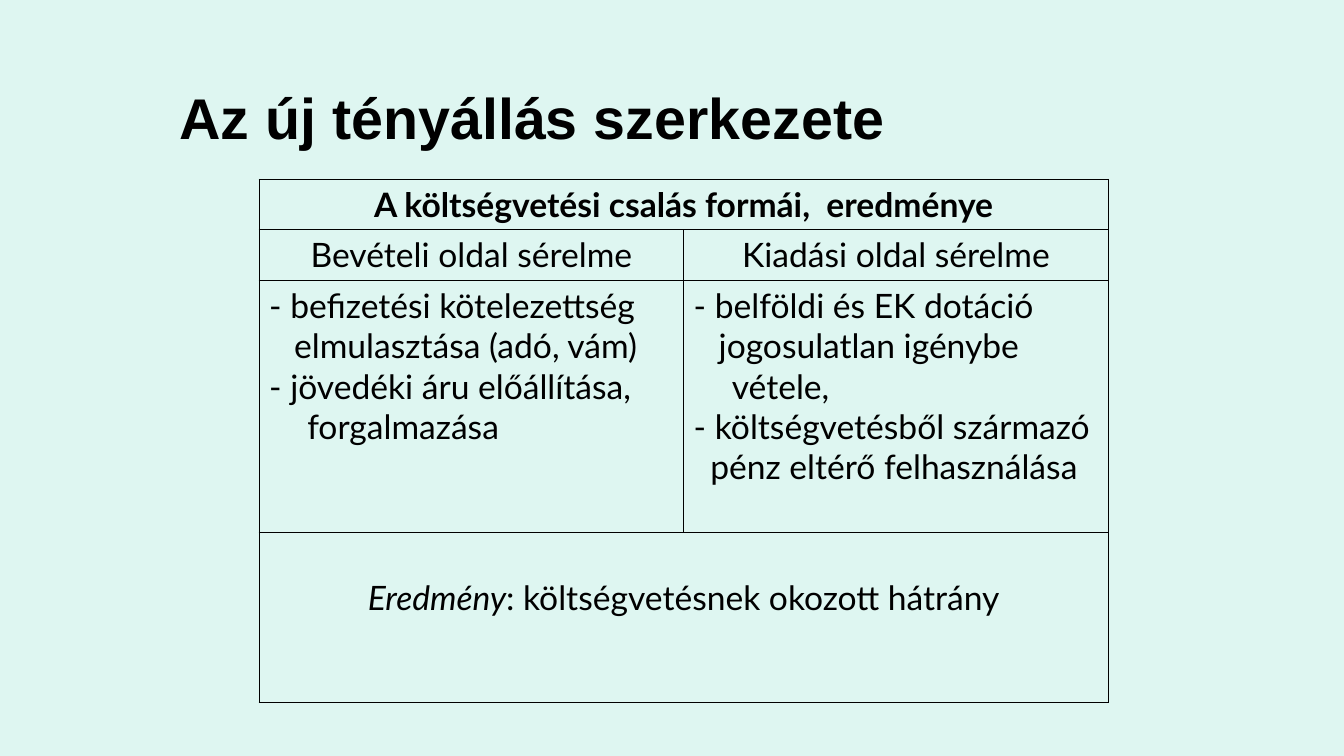
import pptx
import pptx.util
import pptx.dml.color
import pptx.enum.text
import pptx.oxml
import pptx.oxml.ns
from dataclasses import dataclass

Cm, Pt = pptx.util.Cm, pptx.util.Pt
ALIGN = pptx.enum.text.PP_ALIGN


@dataclass(frozen=True)
class Theme:
    background: str = "DEF6F1"
    ink: str = "000000"
    title_font: str = "Arial"
    body_font: str = "Lato"
    title_size: int = 41
    body_size: int = 24
    border: int = 1
    hang: float = 0.96


THEME = Theme()
rgb = pptx.dml.color.RGBColor.from_string

HEADING = "A költségvetési csalás formái,  eredménye"
SIDES = ["Bevételi oldal sérelme", "Kiadási oldal sérelme"]
# Each line of a form: text and where its first line starts, in cm
FORMS = [
    [("- befizetési kötelezettség", 0),
     ("elmulasztása (adó, vám)", 0.63),
     ("- jövedéki áru előállítása, forgalmazása", 0)],
    [("- belföldi és EK dotáció", 0),
     ("jogosulatlan igénybe vétele,", 0.63),
     ("- költségvetésből származó", 0),
     ("pénz eltérő felhasználása", 0.42)],
]
RESULT = ["Eredmény", ": költségvetésnek okozott hátrány"]


def style_run(r, font, size, bold=False):
    r.font.name = font
    r.font.size = Pt(size)
    r.font.bold = bold
    r.font.color.rgb = rgb(THEME.ink)


def add_title(s, text, left, top, width, height):
    sp = s.shapes.title
    sp.left, sp.top, sp.width, sp.height = map(Cm, (left, top, width, height))
    tf = sp.text_frame
    tf.text = text
    tf.auto_size = pptx.enum.text.MSO_AUTO_SIZE.NONE
    tf.vertical_anchor = pptx.enum.text.MSO_ANCHOR.BOTTOM
    p = tf.paragraphs[0]
    p.alignment = ALIGN.LEFT
    style_run(p.runs[0], THEME.title_font, THEME.title_size, bold=True)


def frame_cell(cell):
    """Give a cell thin lines on all sides and no fill."""
    tcPr = cell._tc.get_or_add_tcPr()
    for side in ("lnL", "lnR", "lnT", "lnB"):
        tcPr.append(pptx.oxml.parse_xml(
            f'<a:{side} {pptx.oxml.ns.nsdecls("a")} w="{Pt(THEME.border)}">'
            f'<a:solidFill><a:srgbClr val="{THEME.ink}"/></a:solidFill></a:{side}>'))
    cell.fill.background()


def write_centred(cell, text, bold=False):
    cell.text_frame.text = text
    p = cell.text_frame.paragraphs[0]
    p.alignment = ALIGN.CENTER
    style_run(p.runs[0], THEME.body_font, THEME.body_size, bold)


def write_forms(cell, lines):
    tf = cell.text_frame
    tf.text = "\n".join(text for text, _ in lines)
    for p, (_, start) in zip(tf.paragraphs, lines):
        pPr = p._p.get_or_add_pPr()
        pPr.set("marL", str(Cm(THEME.hang)))
        pPr.set("indent", str(Cm(start - THEME.hang)))
        style_run(p.runs[0], THEME.body_font, THEME.body_size)


def add_forms_table(s, left, top, width, heights):
    tbl = s.shapes.add_table(len(heights), len(SIDES), Cm(left), Cm(top),
                             Cm(width), Cm(sum(heights))).table
    tbl.first_row = tbl.horz_banding = False
    for row, height in zip(tbl.rows, heights):
        row.height = Cm(height)
    for cell in tbl.iter_cells():
        frame_cell(cell)
    for row in (0, len(heights) - 1):
        tbl.cell(row, 0).merge(tbl.cell(row, len(SIDES) - 1))

    # Heading and the two sides of the budget
    write_centred(tbl.cell(0, 0), HEADING, bold=True)
    for col, (side, lines) in enumerate(zip(SIDES, FORMS)):
        write_centred(tbl.cell(1, col), side)
        write_forms(tbl.cell(2, col), lines)

    # Result
    cell = tbl.cell(3, 0)
    cell.margin_top = Cm(1.15)
    write_centred(cell, RESULT[0])
    p = cell.text_frame.paragraphs[0]
    p.runs[0].font.italic = True
    r = p.add_run()
    r.text = RESULT[1]
    style_run(r, THEME.body_font, THEME.body_size)


def main():
    prs = pptx.Presentation()
    prs.slide_width, prs.slide_height = Cm(33.87), Cm(19.05)
    s = prs.slides.add_slide(prs.slide_layouts[5])
    s.background.fill.solid()
    s.background.fill.fore_color.rgb = rgb(THEME.background)
    add_forms_table(s, 6.53, 4.52, 21.4, [1.27, 1.27, 6.35, 4.29])
    add_title(s, "Az új tényállás szerkezete", 4.27, 0.74, 22.86, 3.18)
    prs.save("out.pptx")


if __name__ == "__main__":
    main()
